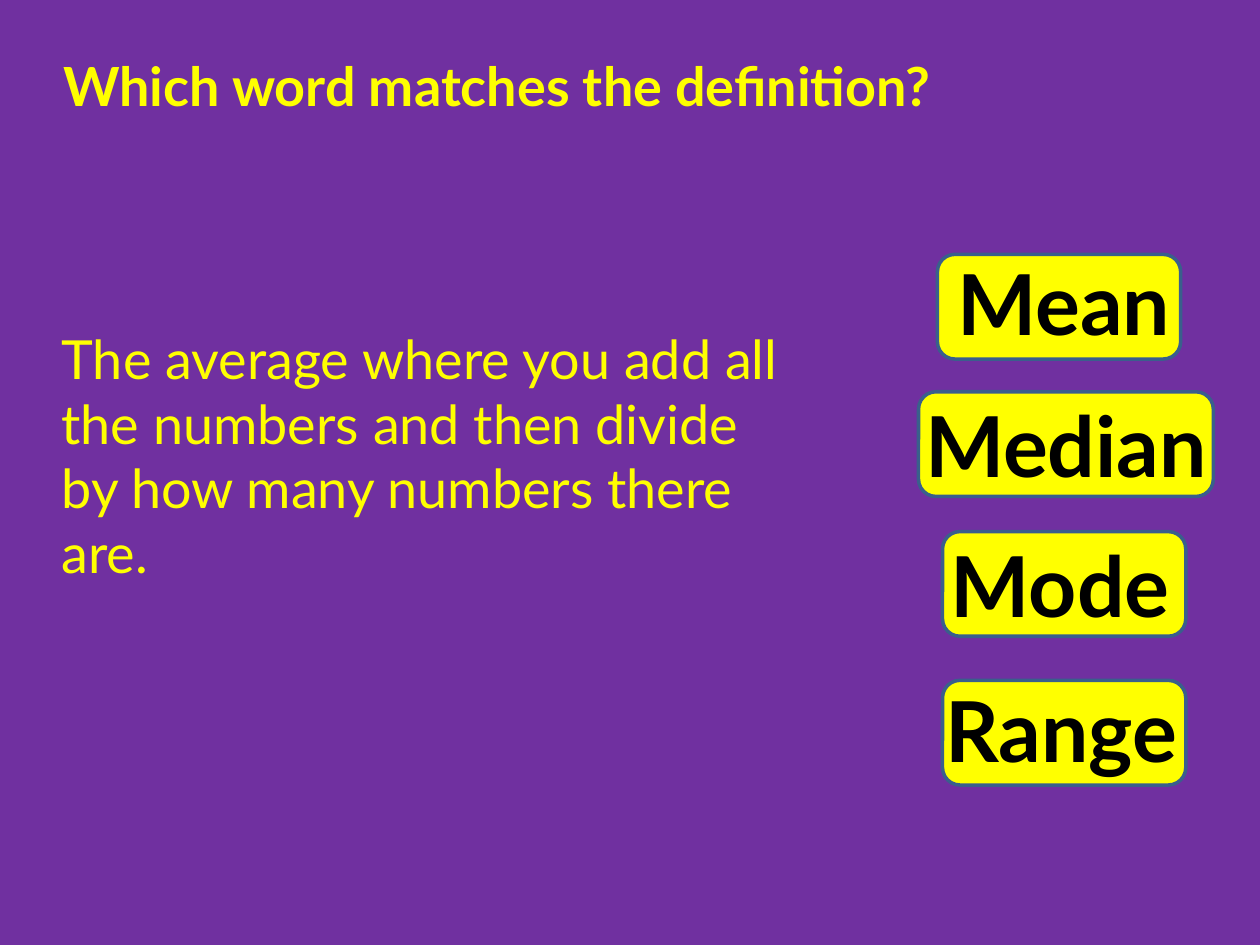
from pptx import Presentation
from pptx.dml.color import RGBColor
from pptx.enum.shapes import MSO_SHAPE
from pptx.enum.text import MSO_ANCHOR, PP_ALIGN
from pptx.util import Pt

PURPLE = RGBColor(0x70, 0x30, 0xA0)
YELLOW = RGBColor(0xFF, 0xFF, 0x00)
BLACK = RGBColor(0x00, 0x00, 0x00)
BORDER = RGBColor(0x3A, 0x5F, 0x8C)
FONT = "Lato"

TITLE = "Which word matches the definition?"
TITLE_BOX = (14.4, 23, 539.3, 51.1)
DEFINITION = ("The average where you add all the numbers and then divide "
              "by how many numbers there are.")
DEFINITION_BOX = (28.1, 193, 431.3, 133.9)

CARD_HEIGHT = 59.8
LABEL_HEIGHT = 41
ANSWERS = [
    {"word": "Mean", "card": (535.7, 145.4, 139), "label": (526.3, 151.9, 163.4)},
    {"word": "Median", "card": (524.9, 223.9, 168.5), "label": (509.8, 233.3, 198.7)},
    {"word": "Range", "card": (538.6, 388.8, 139), "label": (524.9, 396, 163.4)},
    {"word": "Mode", "card": (538.6, 303.8, 139), "label": (524.2, 313.2, 163.4)},
]


def add_text(shapes, text, box, size, color, bold=False, align=PP_ALIGN.CENTER):
    frame = shapes.add_textbox(*map(Pt, box)).text_frame
    frame.word_wrap = True
    frame.vertical_anchor = MSO_ANCHOR.MIDDLE
    frame.text = text
    paragraph = frame.paragraphs[0]
    paragraph.alignment = align
    font = paragraph.runs[0].font
    font.name = FONT
    font.size = Pt(size)
    font.bold = bold
    font.color.rgb = color


def add_answer(slide, answer):
    group = slide.shapes.add_group_shape()
    left, top, width = answer["card"]
    card = group.shapes.add_shape(MSO_SHAPE.ROUNDED_RECTANGLE,
                                  Pt(left), Pt(top), Pt(width), Pt(CARD_HEIGHT))
    card.shadow.inherit = False
    card.fill.solid()
    card.fill.fore_color.rgb = YELLOW
    card.line.color.rgb = BORDER
    card.line.width = Pt(2)
    add_text(group.shapes, answer["word"], (*answer["label"], LABEL_HEIGHT),
             48, BLACK, bold=True)


def main():
    presentation = Presentation()
    presentation.slide_width = Pt(720)
    presentation.slide_height = Pt(540)
    slide = presentation.slides.add_slide(presentation.slide_layouts[6])
    slide.background.fill.solid()
    slide.background.fill.fore_color.rgb = PURPLE

    add_text(slide.shapes, TITLE, TITLE_BOX, 30.8, YELLOW, bold=True)
    for answer in ANSWERS:
        add_answer(slide, answer)
    add_text(slide.shapes, DEFINITION, DEFINITION_BOX, 30.8, YELLOW,
             align=PP_ALIGN.LEFT)
    presentation.save("out.pptx")


if __name__ == "__main__":
    main()
